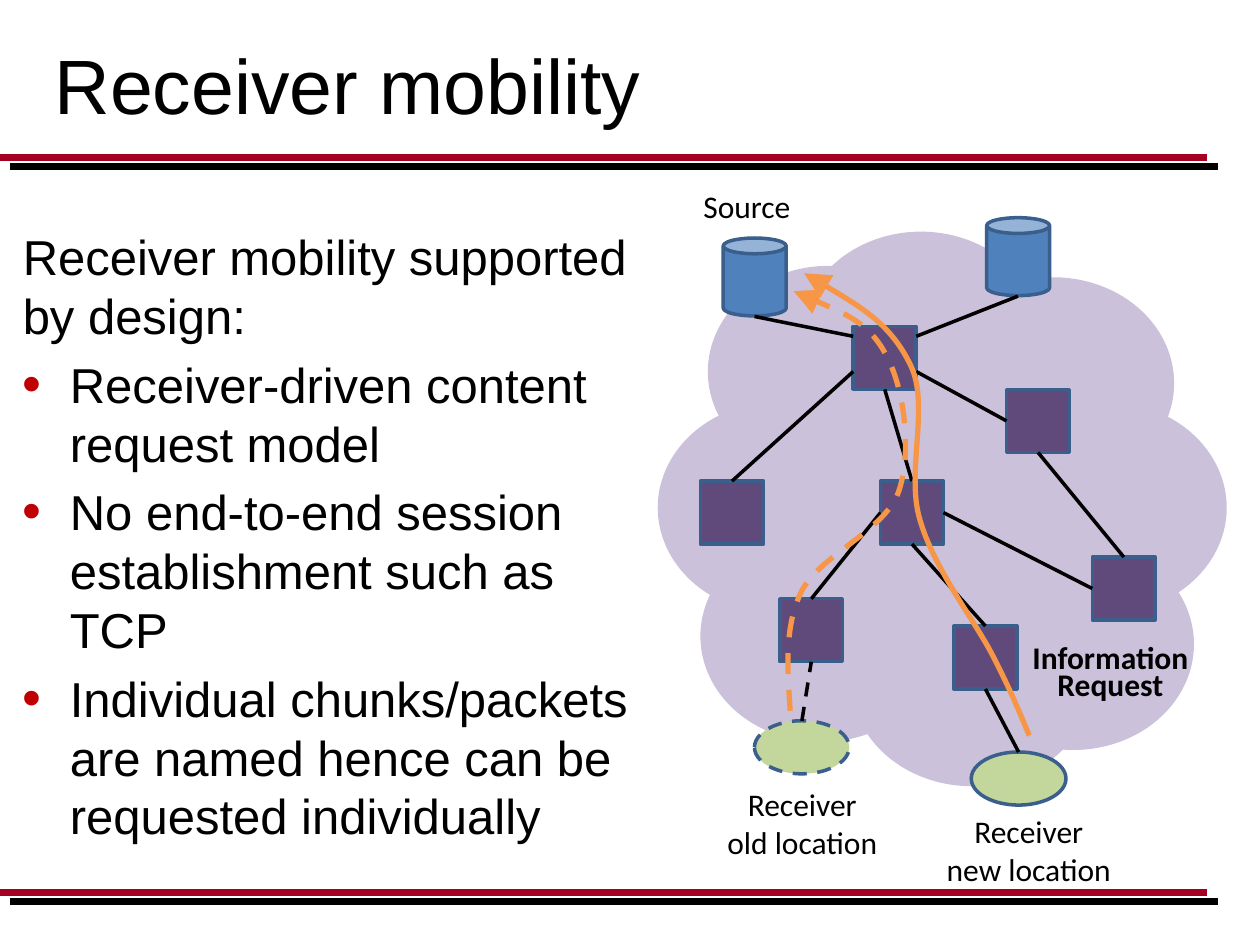
import pptx
import pptx.util
import pptx.dml.color
import pptx.enum.dml
import pptx.enum.shapes
import pptx.enum.text
import pptx.oxml
import pptx.oxml.ns

Cm = pptx.util.Cm
Pt = pptx.util.Pt
RGBColor = pptx.dml.color.RGBColor
MSO_SHAPE = pptx.enum.shapes.MSO_SHAPE
DASH = pptx.enum.dml.MSO_LINE.DASH
CENTER = pptx.enum.text.PP_ALIGN.CENTER

BLACK = RGBColor(0x00, 0x00, 0x00)
BLUE = RGBColor(0x00, 0x00, 0xFF)
CRIMSON = RGBColor(0xA5, 0x00, 0x21)
LILAC = RGBColor(0xCC, 0xC1, 0xDA)
PURPLE = RGBColor(0x60, 0x4A, 0x7B)
GREEN = RGBColor(0xC3, 0xD6, 0x9B)
STEEL = RGBColor(0x4F, 0x81, 0xBD)
OUTLINE = RGBColor(0x3A, 0x5F, 0x8C)
ORANGE = RGBColor(0xF7, 0x96, 0x46)

TOP, LEFT, BOTTOM, RIGHT = range(4)

BULLETS = [
    "Receiver-driven content request model",
    "No end-to-end session establishment such as TCP",
    "Individual chunks/packets are named hence can be requested individually",
]
CLOUD_PUFFS = [
    (14.76, 6.96), (16.13, 4.67), (18.8, 5.59), (14.12, 10.69), (17.15, 11.58),
    (19.2, 10.85), (14.27, 5.36), (13.26, 8.1), (19.86, 8.1), (17.15, 8.26),
]
ROUTERS = {
    "root": (17.2, 6.58), "east": (20.29, 7.85), "west": (14.12, 9.7),
    "middle": (17.75, 9.7), "far east": (22.02, 11.23),
    "old access": (15.72, 12.07), "new access": (19.23, 12.62),
}
SOURCES = [(14.58, 4.8), (19.89, 4.39)]
RECEIVERS = {"new receiver": (19.58, 15.16), "old receiver": (15.21, 14.53)}

# Each end is a node with its side, or a point in centimetres
LINKS = [
    ((15.21, 6.38), (17.2, 6.78)),
    ((18.47, 6.78), (20.52, 5.97)),
    (("west", TOP), (17.2, 7.49)),
    ((18.47, 7.49), ("east", LEFT)),
    (("root", BOTTOM), ("middle", TOP)),
    (("east", BOTTOM), ("far east", TOP)),
    (("middle", RIGHT), ("far east", LEFT)),
    (("old access", TOP), ("middle", LEFT)),
    (("middle", BOTTOM), ("new access", TOP)),
    (("new receiver", TOP), ("new access", BOTTOM)),
]
# Start point, then two control points and an end point for each curve
OLD_ROUTE = [
    (15.93, 14.33),
    (15.88, 13.51), (15.8, 12.67), (16.15, 11.94),
    (16.51, 11.2), (17.81, 10.72), (18.11, 9.93),
    (18.39, 9.14), (18.24, 7.87), (17.88, 7.19),
    (17.53, 6.5), (16.76, 6.2), (16, 5.87),
]
NEW_ROUTE = [
    (20.75, 14.83),
    (20.57, 14.4), (20.4, 13.97), (20.02, 13.23),
    (19.66, 12.52), (18.82, 11.46), (18.54, 10.46),
    (18.26, 9.5), (18.75, 8.18), (18.36, 7.37),
    (17.96, 6.53), (17.09, 6.02), (16.21, 5.51),
]


def add_xml(parent, xml):
    namespace = pptx.oxml.ns.nsdecls("a")
    parent.extend(list(pptx.oxml.parse_xml(f"<a:parts {namespace}>{xml}</a:parts>")))


def set_line(item, color, width, dashed=False):
    item.line.color.rgb = color
    item.line.width = Pt(width)
    if dashed:
        item.line.dash_style = DASH


def add_shape(parent, kind, position, size, fill, outlined=True, dashed=False):
    shape = parent.shapes.add_shape(kind, *map(Cm, position + size))
    shape.shadow.inherit = False
    shape.fill.solid()
    shape.fill.fore_color.rgb = fill
    if outlined:
        set_line(shape, OUTLINE, 2, dashed)
    else:
        shape.line.fill.background()
    return shape


def add_line(parent, start, end, color=BLACK, width=2, dashed=False, effect=""):
    straight = pptx.enum.shapes.MSO_CONNECTOR.STRAIGHT
    line = parent.shapes.add_connector(straight, *map(Cm, start + end))
    set_line(line, color, width, dashed)
    add_xml(line._element.spPr, f"<a:effectLst>{effect}</a:effectLst>")
    return line


def add_link(parent, nodes, start, end, dashed=False):
    points = [(0, 0) if isinstance(tip[0], str) else tip for tip in (start, end)]
    link = add_line(parent, *points, dashed=dashed)
    for tip, connect in ((start, link.begin_connect), (end, link.end_connect)):
        if isinstance(tip[0], str):
            connect(nodes[tip[0]], tip[1])


def add_route(parent, points, dashed=False):
    corners = [(Cm(x), Cm(y)) for x, y in points]
    builder = parent.shapes.build_freeform(*corners[0], scale=1.0)
    builder.add_line_segments(corners[1:], close=False)
    route = builder.convert_to_shape()
    # Merge every three straight segments into one curve
    segments = route._element.xpath(".//a:lnTo")
    for first in range(0, len(segments), 3):
        curve, *others = segments[first:first + 3]
        curve.tag = pptx.oxml.ns.qn("a:cubicBezTo")
        for segment in others:
            curve.append(segment[0])
            segment.getparent().remove(segment)
    route.shadow.inherit = False
    route.fill.background()
    set_line(route, ORANGE, 3, dashed)
    add_xml(route._element.xpath("./p:spPr/a:ln")[0],
            '<a:tailEnd type="triangle" w="lg" len="lg"/>')


def add_text(page, position, size, lines, points, font="Calibri", bold=False,
             align=None, wrap=True):
    box = page.shapes.add_textbox(*map(Cm, position + size))
    frame = box.text_frame
    frame.word_wrap = wrap
    frame.text = "\n".join(lines)
    for para in frame.paragraphs:
        para.alignment = align
        for span in para.runs:
            span.font.name = font
            span.font.size = Pt(points)
            span.font.bold = bold
            span.font.color.rgb = BLACK
    return frame


def add_bullet(para):
    props = para._p.get_or_add_pPr()
    props.set("marL", str(Cm(0.95)))
    props.set("indent", str(-Cm(0.95)))
    add_xml(props, '<a:buClr><a:srgbClr val="C00000"/></a:buClr><a:buSzPct val="110000"/>'
                   '<a:buFont typeface="Arial"/><a:buChar char="•"/>')


def add_rules(page):
    shadow = ('<a:outerShdw dist="99060" dir="2400000" algn="ctr" rotWithShape="0">'
              '<a:srgbClr val="000000"/></a:outerShdw>')
    for y in (3.18, 17.99):
        add_line(page, (0, y), (24.34, y), BLUE, 4, effect=shadow)
    for y in (3.18, 18):
        add_line(page, (0, y), (24.34, y), CRIMSON, 4)


def add_network(page):
    cloud = page.shapes.add_group_shape()
    for position in CLOUD_PUFFS:
        add_shape(cloud, MSO_SHAPE.OVAL, position, (4.87, 4.27), LILAC, outlined=False)

    network = page.shapes.add_group_shape()
    nodes = {}
    for name, position in RECEIVERS.items():
        nodes[name] = add_shape(network, MSO_SHAPE.OVAL, position, (1.91, 1.07),
                                GREEN, dashed=name == "old receiver")
    for name, position in ROUTERS.items():
        nodes[name] = add_shape(network, MSO_SHAPE.RECTANGLE, position, (1.27, 1.27), PURPLE)
    for position in SOURCES:
        add_shape(network, MSO_SHAPE.CAN, position, (1.27, 1.57), STEEL)
    for start, end in LINKS:
        add_link(network, nodes, start, end)
    add_link(network, nodes, ("old receiver", TOP), ("old access", BOTTOM), dashed=True)
    add_route(network, OLD_ROUTE, dashed=True)
    add_route(network, NEW_ROUTE)


def main():
    deck = pptx.Presentation()
    deck.slide_width, deck.slide_height = Cm(25.4), Cm(19.05)
    page = deck.slides.add_slide(deck.slide_layouts[6])
    add_rules(page)

    # Title and body
    title = add_text(page, (0.85, 0), (23.28, 3.38), ["Receiver mobility"], 44, "Arial")
    title.vertical_anchor = pptx.enum.text.MSO_ANCHOR.MIDDLE
    body = add_text(page, (0.21, 4.45), (12.9, 13.97),
                    ["Receiver mobility supported by design:"] + BULLETS, 28, "Arial")
    for para in body.paragraphs:
        para.space_before = Pt(5.6)
    for para in body.paragraphs[1:]:
        add_bullet(para)

    # Network diagram and its labels
    add_network(page)
    add_text(page, (13.93, 3.64), (2.29, 1.02), ["Source"], 18, wrap=False)
    add_text(page, (14.27, 15.7), (3.81, 1.8), ["Receiver", "old location"], 18, align=CENTER)
    add_text(page, (18.67, 16.24), (4.14, 1.8), ["Receiver", "new location"], 18, align=CENTER)
    request = add_text(page, (19.77, 12.98), (5.23, 1.37), ["Information Request"], 18,
                       bold=True, align=CENTER)
    request.paragraphs[0].line_spacing = Pt(15)

    deck.save("out.pptx")


if __name__ == "__main__":
    main()
